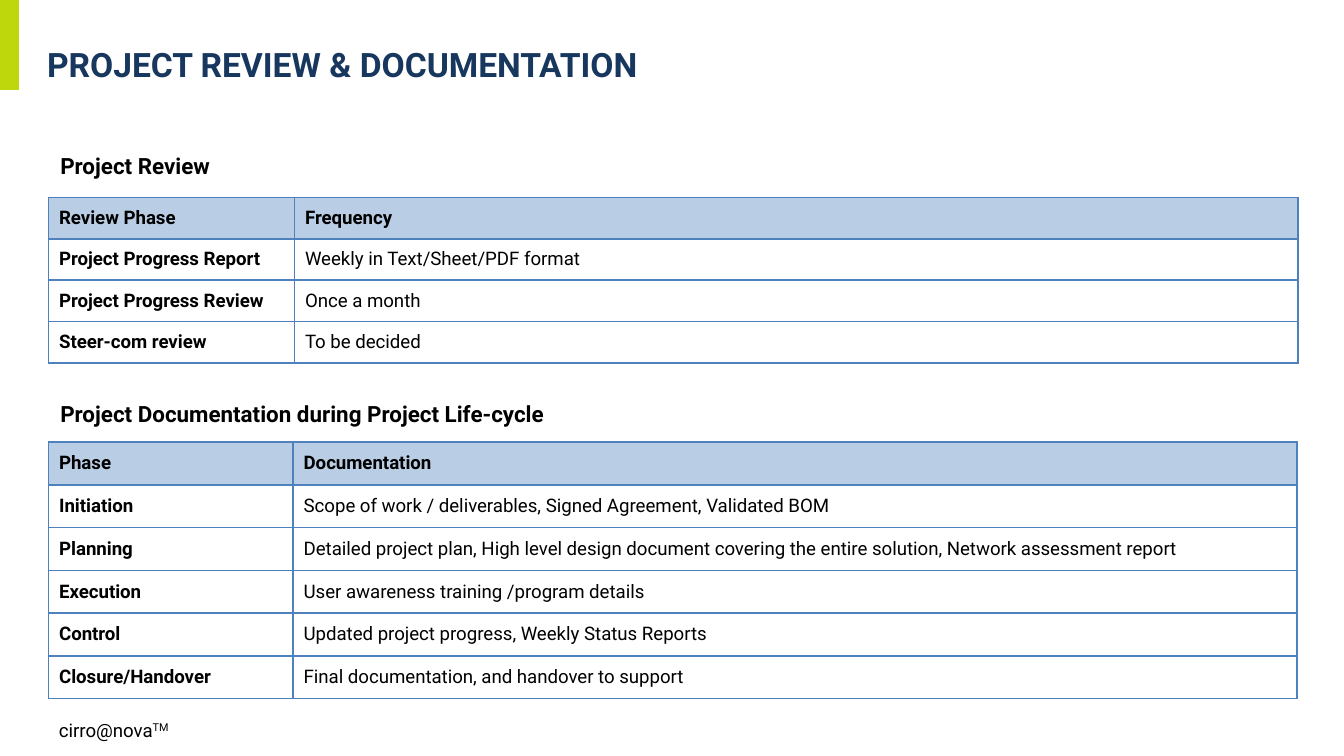
"""Build the project review and documentation slide."""
from lxml import etree
from pptx import Presentation
from pptx.dml.color import RGBColor
from pptx.enum.shapes import MSO_SHAPE
from pptx.enum.text import MSO_ANCHOR
from pptx.oxml.ns import qn
from pptx.util import Inches, Pt

RECTANGLE = MSO_SHAPE.RECTANGLE
MIDDLE = MSO_ANCHOR.MIDDLE
BLACK, NAVY, LIME = "000000", "17375E", "BDD70C"
HEADER_BLUE, BORDER_BLUE = "B9CDE5", "4F81BD"


def color(hex_string):
    return RGBColor.from_string(hex_string)


def add_text(paragraph, text, size=10, bold=False, font_color=BLACK):
    run = paragraph.add_run()
    run.text = text
    run.font.name = "Roboto"
    run.font.size = Pt(size)
    run.font.bold = bold
    run.font.color.rgb = color(font_color)
    return run


presentation = Presentation()
presentation.slide_width = Inches(10)
presentation.slide_height = Inches(10) * 9 // 16
slide = presentation.slides.add_slide(presentation.slide_layouts[6])

accent = slide.shapes.add_shape(RECTANGLE, Inches(-0.01), 0, Inches(0.15), Inches(0.67))
accent.shadow.inherit = False
accent.fill.solid()
accent.fill.fore_color.rgb = color(LIME)
accent.line.fill.background()

title = slide.shapes.add_textbox(Inches(0.35), Inches(0.28), Inches(8.38), Inches(0.4))
title.text_frame.word_wrap = True
title.text_frame.vertical_anchor = MIDDLE
title.text_frame.margin_left = 0
add_text(title.text_frame.paragraphs[0], "PROJECT REVIEW & DOCUMENTATION",
         size=18, bold=True, font_color=NAVY)

sections = [
    ("Project Review", 1.08, 1.47, 1.83, 1.23, [
        ("Review Phase", "Frequency"),
        ("Project Progress Report", "Weekly in Text/Sheet/PDF format"),
        ("Project Progress Review", "Once a month"),
        ("Steer-com review", "To be decided"),
    ]),
    ("Project Documentation during Project Life-cycle", 2.93, 3.29, 1.82, 1.91, [
        ("Phase", "Documentation"),
        ("Initiation", "Scope of work / deliverables, Signed Agreement, Validated BOM"),
        ("Planning", "Detailed project plan, High level design document covering the "
                     "entire solution, Network assessment report"),
        ("Execution", "User awareness training /program details"),
        ("Control", "Updated project progress, Weekly Status Reports"),
        ("Closure/Handover", "Final documentation, and handover to support"),
    ]),
]

for heading, heading_top, table_top, phase_width, table_height, rows in sections:
    heading_box = slide.shapes.add_textbox(
        Inches(0.35), Inches(heading_top), Inches(9.29), Inches(0.3))
    heading_box.text_frame.word_wrap = True
    add_text(heading_box.text_frame.paragraphs[0], heading, size=12, bold=True)

    widths = (phase_width, 7.47)
    table = slide.shapes.add_table(
        len(rows), 2, Inches(0.36), Inches(table_top),
        Inches(sum(widths)), Inches(table_height)).table
    table.horz_banding = False
    for column, width in zip(table.columns, widths):
        column.width = Inches(width)

    for row_index, texts in enumerate(rows):
        for column_index, text in enumerate(texts):
            cell = table.cell(row_index, column_index)
            cell.margin_left = cell.margin_right = Inches(0.08)
            cell.margin_top = cell.margin_bottom = 0
            cell.vertical_anchor = MIDDLE
            properties = cell._tc.get_or_add_tcPr()
            for side in ("a:lnL", "a:lnR", "a:lnT", "a:lnB"):
                border = etree.SubElement(properties, qn(side), w=str(Pt(1)))
                border_fill = etree.SubElement(border, qn("a:solidFill"))
                etree.SubElement(border_fill, qn("a:srgbClr"), val=BORDER_BLUE)
            if row_index == 0:
                cell.fill.solid()
                cell.fill.fore_color.rgb = color(HEADER_BLUE)
            else:
                cell.fill.background()
            add_text(cell.text_frame.paragraphs[0], text,
                     bold=row_index == 0 or column_index == 0)

footer = slide.shapes.add_textbox(Inches(0.34), Inches(5.3), Inches(1.05), Inches(0.27))
footer.text_frame.word_wrap = False
footer_paragraph = footer.text_frame.paragraphs[0]
add_text(footer_paragraph, "cirro@nova")
trademark = add_text(footer_paragraph, "TM")
trademark._r.get_or_add_rPr().set("baseline", "30000")

presentation.save("out.pptx")
